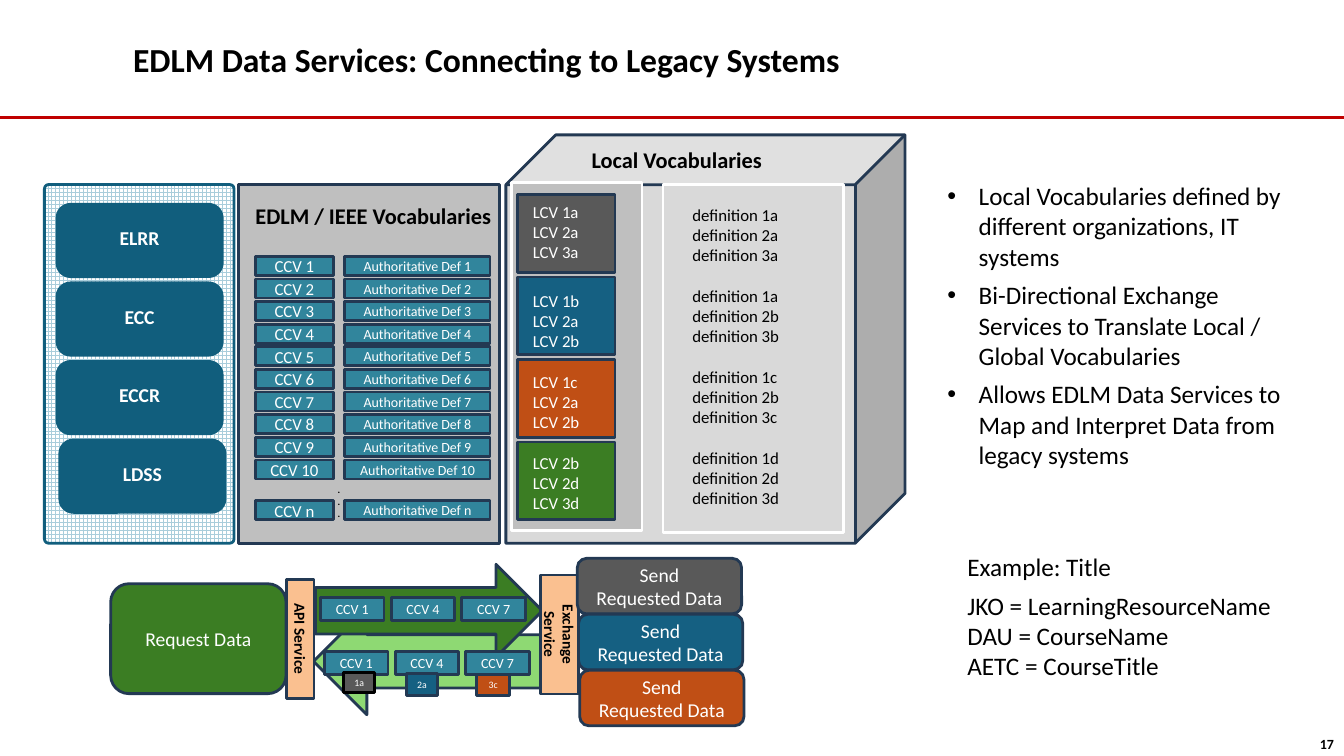
from dataclasses import dataclass

from lxml import etree
from pptx import Presentation
from pptx.dml.color import RGBColor
from pptx.enum.dml import MSO_PATTERN
from pptx.enum.shapes import MSO_CONNECTOR, MSO_SHAPE
from pptx.enum.text import MSO_ANCHOR, MSO_AUTO_SIZE, PP_ALIGN
from pptx.oxml.ns import qn
from pptx.shapes.autoshape import Shape
from pptx.slide import Slide
from pptx.util import Cm, Pt

RECTANGLE, ROUNDED = MSO_SHAPE.RECTANGLE, MSO_SHAPE.ROUNDED_RECTANGLE
CUBE, ARROW = MSO_SHAPE.CUBE, MSO_SHAPE.RIGHT_ARROW
LEFT, CENTER, RIGHT = PP_ALIGN.LEFT, PP_ALIGN.CENTER, PP_ALIGN.RIGHT
TOP, MIDDLE = MSO_ANCHOR.TOP, MSO_ANCHOR.MIDDLE
LARGE_GRID = MSO_PATTERN.LARGE_GRID

BLACK = RGBColor(0x00, 0x00, 0x00)
WHITE = RGBColor(0xFF, 0xFF, 0xFF)
RED = RGBColor(0xC0, 0x00, 0x00)
NAVY = RGBColor(0x23, 0x39, 0x53)
LIGHT_GRAY = RGBColor(0xD9, 0xD9, 0xD9)
GRAY = RGBColor(0xBF, 0xBF, 0xBF)
DARK_GRAY = RGBColor(0x59, 0x59, 0x59)
BLUE = RGBColor(0x15, 0x60, 0x82)
SERVICE_BLUE = RGBColor(0x11, 0x5E, 0x7D)
GRID_BLUE = RGBColor(0xA9, 0xCD, 0xDB)
TEAL = RGBColor(0x31, 0x85, 0x9C)
ORANGE = RGBColor(0xC0, 0x4F, 0x15)
PEACH = RGBColor(0xFA, 0xC0, 0x90)
GREEN = RGBColor(0x3B, 0x7D, 0x23)
LIGHT_GREEN = RGBColor(0x8E, 0xD9, 0x73)

FONT = "Calibri"
GROUP_STARTS = (3, 6, 9)


@dataclass
class TextStyle:
    size: float
    color: RGBColor = BLACK
    bold: bool = False
    align: PP_ALIGN = LEFT
    spacing: float = 1.0


@dataclass
class Block:
    left: float
    top: float
    width: float
    height: float
    fill: RGBColor
    text: str = ""
    size: float = 12
    kind: MSO_SHAPE = RECTANGLE
    line: RGBColor = NAVY
    line_width: float = 2
    color: RGBColor = WHITE
    bold: bool = False
    rotation: float = 0
    adjustment: float | None = None
    spacing: float = 1.0
    side_margin: float = 0.25


@dataclass
class Caption:
    left: float
    top: float
    width: float
    height: float
    text: str
    style: TextStyle
    gaps: dict[int, float]


def write(shape: Shape, text: str, style: TextStyle, gaps: dict[int, float], anchor: MSO_ANCHOR) -> None:
    """Fill a shape with paragraphs; gaps maps a paragraph index to its space before."""
    frame = shape.text_frame
    frame.text = text
    frame.word_wrap = True
    frame.auto_size = MSO_AUTO_SIZE.NONE
    frame.vertical_anchor = anchor
    for index, paragraph in enumerate(frame.paragraphs):
        paragraph.alignment = style.align
        paragraph.line_spacing = style.spacing
        paragraph.space_before = Pt(gaps.get(index, 0))
        for run in paragraph.runs:
            run.font.name = FONT
            run.font.size = Pt(style.size)
            run.font.bold = style.bold
            run.font.color.rgb = style.color


def place(shape: Shape, left: float, top: float, width: float, height: float) -> None:
    shape.left, shape.top = Cm(left), Cm(top)
    shape.width, shape.height = Cm(width), Cm(height)


def draw_block(slide: Slide, block: Block) -> Shape:
    shape = slide.shapes.add_shape(
        block.kind, Cm(block.left), Cm(block.top), Cm(block.width), Cm(block.height))
    shape.shadow.inherit = False
    shape.rotation = block.rotation
    if block.adjustment is not None:
        shape.adjustments[0] = block.adjustment
    shape.fill.solid()
    shape.fill.fore_color.rgb = block.fill
    shape.line.color.rgb = block.line
    shape.line.width = Pt(block.line_width)
    if block.text:
        style = TextStyle(block.size, block.color, block.bold, CENTER, block.spacing)
        write(shape, block.text, style, {}, MIDDLE)
        shape.text_frame.margin_left = shape.text_frame.margin_right = Cm(block.side_margin)
    return shape


def draw_caption(slide: Slide, caption: Caption) -> None:
    box = slide.shapes.add_textbox(
        Cm(caption.left), Cm(caption.top), Cm(caption.width), Cm(caption.height))
    write(box, caption.text, caption.style, caption.gaps, TOP)


def draw_header(slide: Slide) -> None:
    rule = slide.shapes.add_connector(MSO_CONNECTOR.STRAIGHT, Cm(0), Cm(2.97), Cm(33.87), Cm(2.97))
    rule.line.color.rgb = RED
    rule.line.width = Pt(2)
    etree.SubElement(rule._element.spPr, qn("a:effectLst"))
    title = slide.shapes.title
    place(title, 3.1, 0.2, 30.1, 2.57)
    write(title, "EDLM Data Services: Connecting to Legacy Systems", TextStyle(24, bold=True), {}, MIDDLE)
    draw_caption(slide, Caption(25.97, 18.42, 7.9, 0.64, "17", TextStyle(10, bold=True, align=RIGHT), {}))


def draw_local_vocabularies(slide: Slide) -> None:
    draw_block(slide, Block(12.75, 3.4, 10.06, 10.29, LIGHT_GRAY, kind=CUBE, adjustment=0.125))
    draw_block(slide, Block(12.9, 4.6, 3.28, 8.76, GRAY, line=WHITE))
    draw_block(slide, Block(16.71, 4.65, 4.55, 8.76, LIGHT_GRAY, line=WHITE))
    for index, color in enumerate((DARK_GRAY, BLUE, ORANGE, GREEN)):
        draw_block(slide, Block(13.04, 4.9 + 2.08 * index, 2.46, 1.96, color))
    definitions = "1a 2a 3a 1a 2b 3b 1c 2b 3c 1d 2d 3d".split()
    terms = "1a 2a 3a 1b 2a 2b 1c 2a 2b 2b 2d 3d".split()
    blank_line = dict.fromkeys(GROUP_STARTS, 14.6)
    for caption in (
        Caption(14.66, 3.56, 6.35, 0.81, "Local Vocabularies", TextStyle(16, bold=True), {}),
        Caption(17.2, 5.03, 3.07, 7.87, "\n".join(f"definition {name}" for name in definitions),
                TextStyle(12), blank_line),
        Caption(13.18, 4.95, 3.18, 8.15, "\n".join(f"LCV {name}" for name in terms),
                TextStyle(12, WHITE), blank_line | {3: 20.6}),
    ):
        draw_caption(slide, caption)


def draw_shared_vocabularies(slide: Slide) -> None:
    draw_block(slide, Block(6.02, 4.65, 6.58, 9.04, GRAY))
    draw_caption(slide, Caption(6.12, 4.98, 6.58, 0.94, "EDLM / IEEE Vocabularies",
                                TextStyle(16, bold=True, align=CENTER), {}))
    rows = [(str(index + 1), 6.46 + 0.57 * index) for index in range(10)] + [("n", 12.62)]
    for name, top in rows:
        draw_block(slide, Block(6.43, top, 1.98, 0.48, TEAL, f"CCV {name}"))
        draw_block(slide, Block(8.69, top, 3.66, 0.48, TEAL, f"Authoritative Def {name}", 10))
    draw_caption(slide, Caption(8.26, 12.07, 0.58, 1.14, ".\n.\n.", TextStyle(7, bold=True), {}))


def draw_exchange(slide: Slide) -> None:
    blocks = [
        Block(7.9, 15.32, 5.74, 2.69, LIGHT_GREEN, kind=ARROW, rotation=180),
        Block(7.95, 14.22, 5.72, 2.34, GREEN, kind=ARROW),
        Block(2.79, 14.71, 4.42, 2.77, GREEN, "Request Data", 14, ROUNDED),
        Block(6.07, 15.75, 3, 0.69, PEACH, "API Service", 11, color=BLACK, bold=True, rotation=90),
        Block(12.6, 15.52, 3, 0.94, PEACH, "Exchange Service", 11, color=BLACK, bold=True, rotation=90),
    ]
    # Vocabulary codes carried by each arrow
    for left, top in ((8.08, 15.06), (8.18, 16.41)):
        blocks += [Block(left + 1.78 * index, top, 1.6, 0.58, TEAL, f"CCV {number}", 10)
                   for index, number in enumerate((1, 4, 7))]
    blocks += [
        Block(8.66, 16.94, 0.79, 0.51, DARK_GRAY, "1a", 7, line=BLACK, side_margin=0),
        Block(10.24, 16.97, 0.79, 0.56, BLUE, "2a", 7, side_margin=0),
        Block(12.01, 16.99, 0.84, 0.53, ORANGE, "3c", 7, side_margin=0),
    ]
    blocks += [Block(14.55 + 0.03 * index, 14.07 + 1.41 * index, 4.14, 1.4, color,
                     "Send\nRequested Data", 14, ROUNDED)
               for index, color in enumerate((DARK_GRAY, BLUE, ORANGE))]
    for block in blocks:
        draw_block(slide, block)


def draw_services(slide: Slide) -> None:
    backdrop = draw_block(slide, Block(1.12, 4.65, 4.78, 9.04, WHITE, kind=ROUNDED,
                                       line=SERVICE_BLUE, adjustment=0.023))
    backdrop.fill.patterned()
    backdrop.fill.pattern = LARGE_GRID
    backdrop.fill.fore_color.rgb = GRID_BLUE
    backdrop.fill.back_color.rgb = WHITE
    for index, (name, left) in enumerate((("ELRR", 1.5), ("ECC", 1.5), ("ECCR", 1.5), ("LDSS", 1.57))):
        draw_block(slide, Block(left, 5.21 + 1.98 * index, 4.04, 1.7, SERVICE_BLUE, name, 14, ROUNDED,
                                SERVICE_BLUE, 5.5, bold=True, spacing=0.75))


def draw_notes_column(slide: Slide) -> None:
    body = slide.placeholders[1]
    place(body, 23.62, 4.42, 9.32, 7.62)
    write(body, "Local Vocabularies defined by different organizations, IT systems\n"
          "Bi-Directional Exchange Services to Translate Local / Global Vocabularies\n"
          "Allows EDLM Data Services to Map and Interpret Data from legacy systems",
          TextStyle(18), {1: 6, 2: 6}, TOP)
    for paragraph in body.text_frame.paragraphs:
        properties = paragraph._p.get_or_add_pPr()
        properties.set("marL", str(Cm(0.79)))
        properties.set("indent", str(-Cm(0.79)))
        etree.SubElement(properties, qn("a:buChar")).set("char", "•")
    draw_caption(slide, Caption(24.13, 13.77, 8.6, 3.56, "Example: Title\nJKO = LearningResourceName\n"
                                "DAU = CourseName\nAETC = CourseTitle", TextStyle(18), {1: 6}))


def main() -> None:
    presentation = Presentation()
    presentation.slide_width, presentation.slide_height = Cm(33.87), Cm(19.05)
    slide = presentation.slides.add_slide(presentation.slide_layouts[1])
    draw_header(slide)
    draw_local_vocabularies(slide)
    draw_shared_vocabularies(slide)
    draw_exchange(slide)
    draw_services(slide)
    draw_notes_column(slide)
    presentation.save("out.pptx")


if __name__ == "__main__":
    main()
